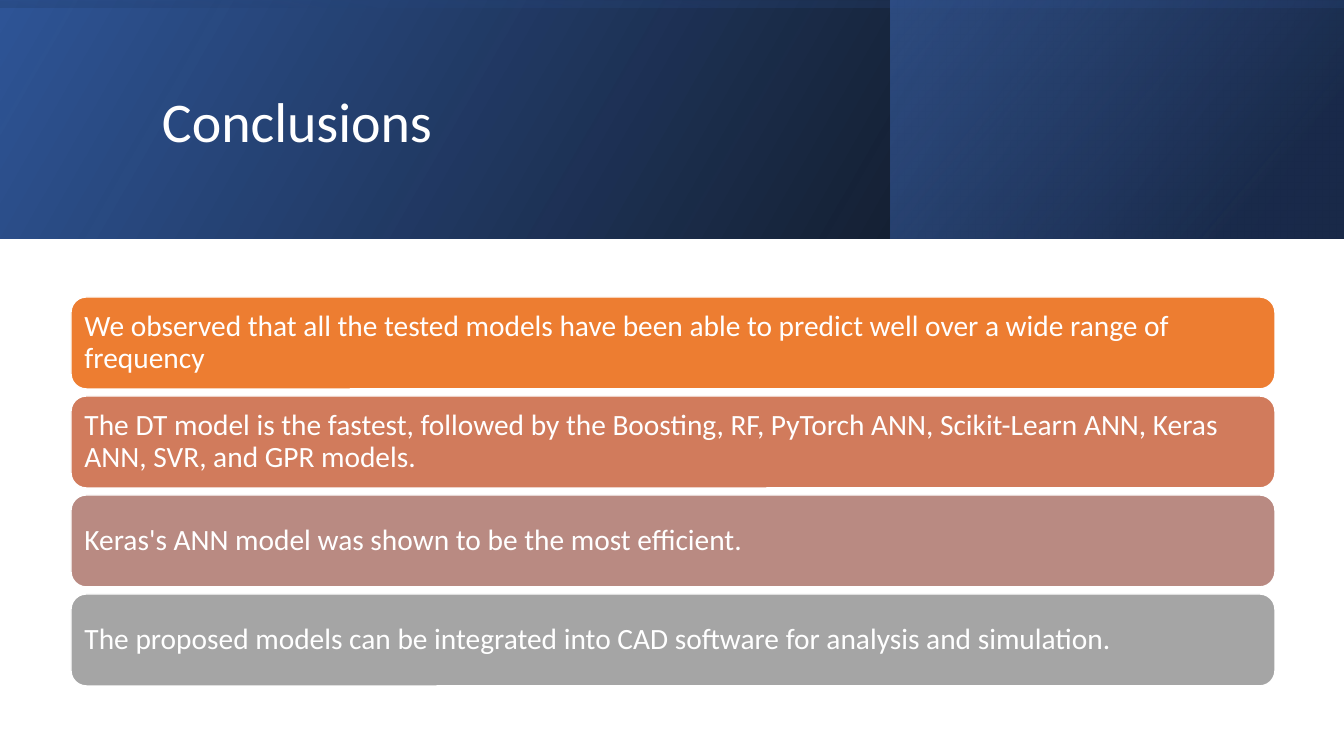
import pptx
import pptx.util
import pptx.dml.color
import pptx.enum.shapes
import pptx.enum.text
import pptx.oxml.ns
import lxml.etree

PX = 12192000 / 1344
KIND = pptx.enum.shapes.MSO_SHAPE


def rgb(code):
    return pptx.dml.color.RGBColor.from_string(code)


def write(shape, text, size=21, color="FFFFFF", font="Calibri", inset=9):
    frame = shape.text_frame
    frame.word_wrap = True
    frame.vertical_anchor = pptx.enum.text.MSO_ANCHOR.MIDDLE
    frame.margin_left = frame.margin_right = round(inset * PX)
    frame.margin_top = frame.margin_bottom = round(inset * PX)
    para = frame.paragraphs[0]
    para.alignment = pptx.enum.text.PP_ALIGN.LEFT
    para.line_spacing = 0.9
    run = para.add_run()
    run.text = text
    run.font.size = pptx.util.Pt(size)
    run.font.name = font
    run.font.color.rgb = rgb(color)


deck = pptx.Presentation()
deck.slide_width = round(1344 * PX)
deck.slide_height = round(756 * PX)
slide = deck.slides.add_slide(deck.slide_layouts[6])
shapes = slide.shapes

panels = [
    ((0, 0, 1344, 239), 0, 30, [(0, "000000", 96), (100, "2F5597", 100)]),
    ((891, 0, 452, 239), 0, 40, [(19, "203864", 68), (100, "4472C4", 48)]),
    ((552, -552, 239, 1344), 270, 10, [(23, "2F5597", 16), (99, "000000", 45)]),
]
for box, turn, angle, stops in panels:
    panel = shapes.add_shape(KIND.RECTANGLE, *[round(n * PX) for n in box])
    panel.shadow.inherit = False
    panel.rotation = turn
    panel.element.spPr.xfrm.set("flipH", "1")
    panel.line.fill.background()
    panel.fill.gradient()
    panel.fill.gradient_angle = angle
    for stop, (place, color, _) in zip(panel.fill.gradient_stops, stops):
        stop.position = place / 100
        stop.color.rgb = rgb(color)
    tints = panel.element.spPr.iter(pptx.oxml.ns.qn("a:srgbClr"))
    for tint, (_, _, alpha) in zip(list(tints), stops):
        mark = lxml.etree.SubElement(tint, pptx.oxml.ns.qn("a:alpha"))
        mark.set("val", str(alpha * 1000))

title = shapes.add_textbox(*[round(n * PX) for n in (152, 38, 1072, 173)])
write(title, "Conclusions", size=40, inset=10)

points = [
    ("ED7D31", "We observed that all the tested models have been able to predict well over a wide range of frequency"),
    ("D17B5C", "The DT model is the fastest, followed by the Boosting, RF, PyTorch ANN, Scikit-Learn ANN, Keras ANN, SVR, and GPR models."),
    ("B98A82", "Keras's ANN model was shown to be the most efficient."),
    ("A5A5A5", "The proposed models can be integrated into CAD software for analysis and simulation."),
]
for row, (color, text) in enumerate(points):
    box = (71, 297 + 99 * row, 1204, 92)
    bar = shapes.add_shape(KIND.ROUNDED_RECTANGLE, *[round(n * PX) for n in box])
    bar.shadow.inherit = False
    bar.fill.solid()
    bar.fill.fore_color.rgb = rgb(color)
    bar.line.color.rgb = rgb("FFFFFF")
    bar.line.width = pptx.util.Pt(1)
    write(bar, text)

deck.save("out.pptx")
